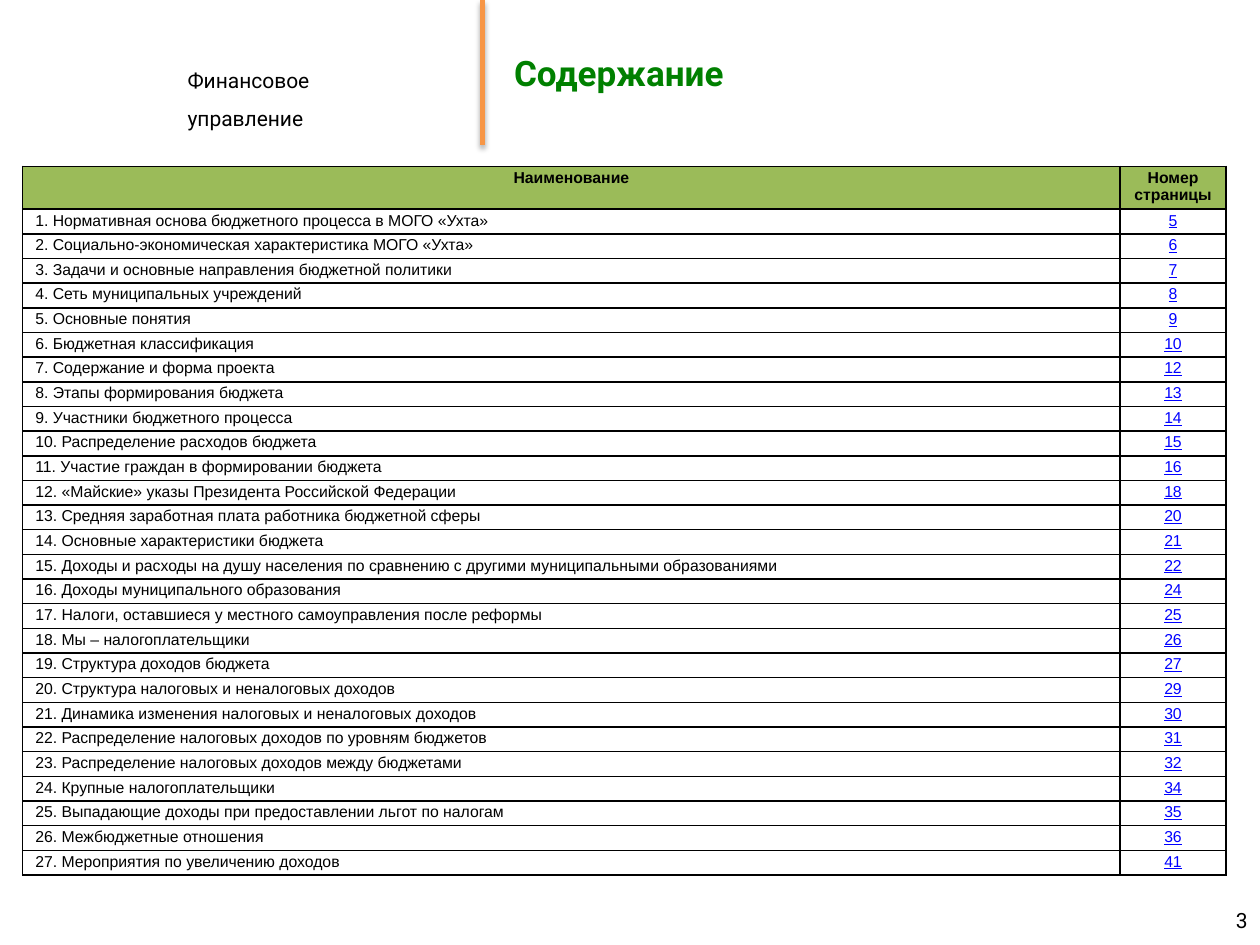
from lxml import etree
from pptx import Presentation
from pptx.dml.color import RGBColor
from pptx.enum import shapes, text
from pptx.oxml import parse_xml
from pptx.oxml.ns import nsdecls, qn
from pptx.util import Inches, Pt

TITLE = "Содержание"
DEPARTMENT = "Финансовое управление"
PAGE = "3"
HEADERS = ("Наименование", "Номер страницы")
SECTIONS = [
    ("Нормативная основа бюджетного процесса в МОГО «Ухта»", 5),
    ("Социально-экономическая характеристика МОГО «Ухта»", 6),
    ("Задачи и основные направления бюджетной политики", 7),
    ("Сеть муниципальных учреждений", 8),
    ("Основные понятия", 9),
    ("Бюджетная классификация", 10),
    ("Содержание и форма проекта", 12),
    ("Этапы формирования бюджета", 13),
    ("Участники бюджетного процесса", 14),
    ("Распределение расходов бюджета", 15),
    ("Участие граждан в формировании бюджета", 16),
    ("«Майские» указы Президента Российской Федерации", 18),
    ("Средняя заработная плата работника бюджетной сферы", 20),
    ("Основные характеристики бюджета", 21),
    ("Доходы и расходы на душу населения по сравнению с другими "
     "муниципальными образованиями", 22),
    ("Доходы муниципального образования", 24),
    ("Налоги, оставшиеся у местного самоуправления после реформы", 25),
    ("Мы – налогоплательщики", 26),
    ("Структура доходов бюджета", 27),
    ("Структура налоговых и неналоговых доходов", 29),
    ("Динамика изменения налоговых и неналоговых доходов", 30),
    ("Распределение налоговых доходов по уровням бюджетов", 31),
    ("Распределение налоговых доходов между бюджетами", 32),
    ("Крупные налогоплательщики", 34),
    ("Выпадающие доходы при предоставлении льгот по налогам", 35),
    ("Межбюджетные отношения", 36),
    ("Мероприятия по увеличению доходов", 41),
]
COLUMNS = (8.71, 0.84)
TABLE_HEIGHT, HEADER_HEIGHT = 5.62, 0.33
LEFT, CENTER, RIGHT = text.PP_ALIGN.LEFT, text.PP_ALIGN.CENTER, text.PP_ALIGN.RIGHT


def color(value):
    return RGBColor.from_string(value)


def write(tf, content, size, font="Roboto", fill="000000", bold=False,
          underline=False, align=LEFT):
    tf.text = content
    tf.word_wrap = True
    p = tf.paragraphs[0]
    p.alignment = align
    f = p.runs[0].font
    f.size, f.name, f.bold, f.underline = Pt(size), font, bold, underline
    f.color.rgb = color(fill)
    return p


def add_text(s, box, content, **style):
    tf = s.shapes.add_textbox(*map(Inches, box)).text_frame
    return tf, write(tf, content, 12, **style)


def add_divider(s):
    line = s.shapes.add_connector(shapes.MSO_CONNECTOR.STRAIGHT, Inches(3.83), 0,
                                  Inches(3.83), Inches(1.15))
    line.line.color.rgb = color("F79646")
    line.line.width = Pt(3)
    line._element.spPr.append(parse_xml(
        f'<a:effectLst {nsdecls("a")}><a:outerShdw blurRad="{Pt(3.1)}" '
        f'dist="{Pt(1.8)}" dir="5400000" rotWithShape="0"><a:srgbClr val="000000">'
        '<a:alpha val="35000"/></a:srgbClr></a:outerShdw></a:effectLst>'))


def add_borders(cell):
    """Draw the four cell borders; they must precede the cell fill."""
    tcPr = cell._tc.get_or_add_tcPr()
    for i, side in enumerate(("lnL", "lnR", "lnT", "lnB")):
        ln = etree.Element(qn(f"a:{side}"), w=str(Pt(1)))
        fill = etree.SubElement(ln, qn("a:solidFill"))
        etree.SubElement(fill, qn("a:srgbClr"), val="000000")
        tcPr.insert(i, ln)


def fill_cell(cell, content, background=None, **style):
    cell.margin_left = cell.margin_right = Inches(0.1)
    cell.margin_top = cell.margin_bottom = Inches(0.02)
    write(cell.text_frame, content, 9, "Arial", **style)
    if background:
        cell.fill.solid()
        cell.fill.fore_color.rgb = color(background)
    else:
        cell.fill.background()
    add_borders(cell)


def add_contents(s):
    table = s.shapes.add_table(len(SECTIONS) + 1, len(COLUMNS), Inches(0.18),
                               Inches(1.32), Inches(sum(COLUMNS)),
                               Inches(TABLE_HEIGHT)).table
    table.horz_banding = False
    for column, width in zip(table.columns, COLUMNS):
        column.width = Inches(width)
    for row in table.rows:
        row.height = Inches((TABLE_HEIGHT - HEADER_HEIGHT) / len(SECTIONS))
    table.rows[0].height = Inches(HEADER_HEIGHT)
    for c, header in enumerate(HEADERS):
        fill_cell(table.cell(0, c), header, "9BBB59", bold=True, align=CENTER)
    for n, (name, page) in enumerate(SECTIONS, 1):
        fill_cell(table.cell(n, 0), f"{n}. {name}")
        fill_cell(table.cell(n, 1), str(page), fill="0000FF", underline=True,
                  align=CENTER)


def main():
    prs = Presentation()
    prs.slide_width, prs.slide_height = Inches(10), Inches(7.5)
    s = prs.slides.add_slide(prs.slide_layouts[5])

    title = s.shapes.title
    title.left, title.top, title.width, title.height = map(Inches, (3.98, 0, 6.02, 1.15))
    write(title.text_frame, TITLE, 20, fill="008000", bold=True)
    title.text_frame.vertical_anchor = text.MSO_ANCHOR.MIDDLE

    p = add_text(s, (1.39, 0.39, 2, 0.36), DEPARTMENT)[1]
    p.line_spacing = 1.5
    add_divider(s)
    tf = add_text(s, (7.67, 7.1, 2.33, 0.4), PAGE, align=RIGHT)[0]
    tf.vertical_anchor = text.MSO_ANCHOR.MIDDLE
    add_contents(s)
    prs.save("out.pptx")


if __name__ == "__main__":
    main()
